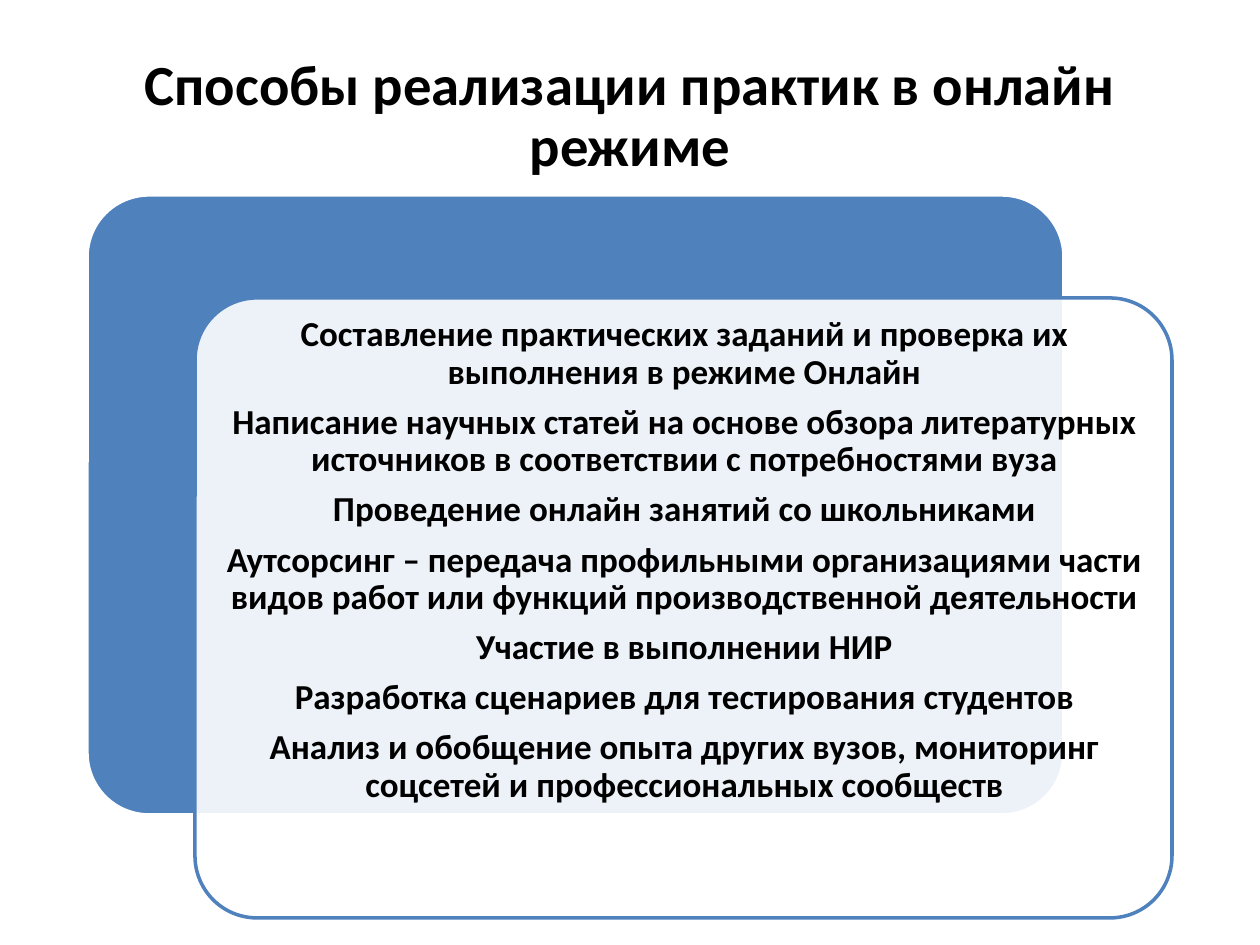
import lxml.etree
import pptx
import pptx.dml.color
import pptx.enum.shapes
import pptx.enum.text
import pptx.oxml.ns
import pptx.util

EMU_PER_PX = 914400 / 126
FONT = "Calibri"
WHITE = pptx.dml.color.RGBColor(0xFF, 0xFF, 0xFF)
BLACK = pptx.dml.color.RGBColor(0x00, 0x00, 0x00)
BLUE = pptx.dml.color.RGBColor(0x4F, 0x81, 0xBD)

TITLE = "Способы реализации практик в онлайн режиме"
METHODS = [
    "Составление практических заданий и проверка их выполнения в режиме Онлайн",
    "Написание научных статей на основе обзора литературных источников "
    "в соответствии с потребностями вуза",
    "Проведение онлайн занятий со школьниками",
    "Аутсорсинг – передача профильными организациями части видов работ "
    "или функций производственной деятельности",
    "Участие в выполнении НИР",
    "Разработка сценариев для тестирования студентов",
    "Анализ и обобщение опыта других вузов, мониторинг соцсетей "
    "и профессиональных сообществ",
]


def px(length):
    return pptx.util.Emu(round(length * EMU_PER_PX))


def add_panel(slide, left, top, fill, line, opacity=100):
    """Add a rounded panel; both panels share one size."""
    panel = slide.shapes.add_shape(
        pptx.enum.shapes.MSO_SHAPE.ROUNDED_RECTANGLE,
        px(left), px(top), px(977), px(620))
    panel.adjustments[0] = 0.1
    panel.shadow.inherit = False
    panel.fill.solid()
    panel.fill.fore_color.rgb = fill
    panel.line.color.rgb = line
    panel.line.width = pptx.util.Pt(2)
    if opacity < 100:
        qn = pptx.oxml.ns.qn
        # The fill precedes the line, so its colour is the first one found.
        color = panel.element.spPr.find(".//" + qn("a:srgbClr"))
        alpha = lxml.etree.SubElement(color, qn("a:alpha"))
        alpha.set("val", str(opacity * 1000))


def add_centred_text(slide, box, lines, size, anchor, inset, space_after=0):
    """Add bold paragraphs; inset is (horizontal, vertical) in px."""
    frame = slide.shapes.add_textbox(*map(px, box)).text_frame
    frame.word_wrap = True
    frame.vertical_anchor = anchor
    frame.margin_left = frame.margin_right = px(inset[0])
    frame.margin_top = frame.margin_bottom = px(inset[1])
    frame.text = "\n".join(lines)
    for paragraph in frame.paragraphs:
        paragraph.alignment = pptx.enum.text.PP_ALIGN.CENTER
        paragraph.line_spacing = 0.9
        paragraph.space_after = pptx.util.Pt(space_after)
        font = paragraph.runs[0].font
        font.name = FONT
        font.size = pptx.util.Pt(size)
        font.bold = True
        font.color.rgb = BLACK


def main():
    presentation = pptx.Presentation()
    presentation.slide_width = px(1260)
    presentation.slide_height = px(945)
    slide = presentation.slides.add_slide(presentation.slide_layouts[6])
    anchors = pptx.enum.text.MSO_ANCHOR

    add_centred_text(slide, (87, 50, 1086, 135), [TITLE], 32.4,
                     anchors.MIDDLE, (13, 6))
    add_panel(slide, 87, 195, BLUE, WHITE)
    add_panel(slide, 195, 298, WHITE, BLUE, opacity=90)
    add_centred_text(slide, (214, 316, 941, 585), METHODS, 20,
                     anchors.TOP, (10, 0), space_after=7)

    presentation.save("out.pptx")


if __name__ == "__main__":
    main()
